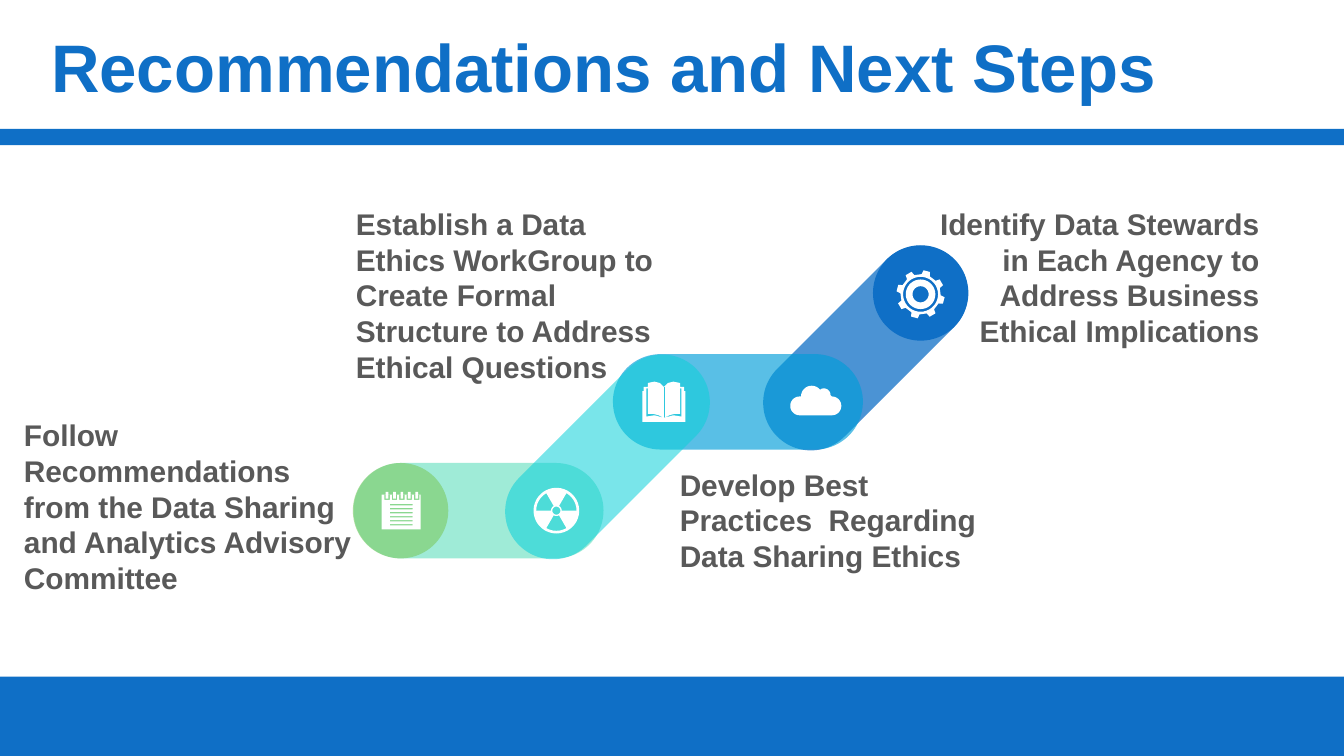
from math import cos, radians, sin

from lxml.etree import SubElement
from pptx import Presentation
from pptx.dml.color import RGBColor
from pptx.enum.shapes import MSO_SHAPE
from pptx.enum.text import MSO_ANCHOR, PP_ALIGN
from pptx.oxml.ns import qn
from pptx.util import Inches, Pt

BLUE, GREY, WHITE = "0F6FC6", "595959", "FFFFFF"


def paint(shape, color, opacity=100):
    """Give a shape a plain fill, without line or shadow."""
    shape.shadow.inherit = False
    shape.line.fill.background()
    shape.fill.solid()
    shape.fill.fore_color.rgb = RGBColor.from_string(color)
    if opacity < 100:
        tint = shape.fill._xPr.find(".//" + qn("a:srgbClr"))
        SubElement(tint, qn("a:alpha"), val=str(opacity * 1000))


def write(shape, text, size=16, color=GREY, align=PP_ALIGN.LEFT,
          anchor=MSO_ANCHOR.TOP, spacing=None):
    frame = shape.text_frame
    frame.word_wrap = True
    frame.vertical_anchor = anchor
    paragraph = frame.paragraphs[0]
    paragraph.alignment = align
    paragraph.line_spacing = spacing
    run = paragraph.add_run()
    run.text = text
    run.font.name = "Arial"
    run.font.size = Pt(size)
    run.font.bold = True
    run.font.color.rgb = RGBColor.from_string(color)


# Widescreen, 16:9
presentation = Presentation()
presentation.slide_width = Inches(10)
presentation.slide_height = Inches(10) * 9 // 16
slide = presentation.slides.add_slide(presentation.slide_layouts[5])
shapes = slide.shapes

# Bands and title
for top, height in [(5.03, 0.59), (0.96, 0.12)]:
    band = shapes.add_shape(MSO_SHAPE.RECTANGLE, 0, Inches(top), Inches(10), Inches(height))
    paint(band, BLUE)
    if top > 5:
        band.top = presentation.slide_height - band.height

title = shapes.title
title.left, title.top = Inches(0.28), Inches(0)
title.width, title.height = Inches(9.72), Inches(0.97)
write(title, "Recommendations and Next Steps", size=36, color=BLUE, anchor=MSO_ANCHOR.MIDDLE)

# Chain of translucent links; each overlap of two round ends makes a step
THICK, LONG = 0.71, 1.86
links = [
    (MSO_SHAPE.ROUNDED_RECTANGLE, 6.44, 2.59, LONG, 45, BLUE, 75),
    (MSO_SHAPE.OVAL, 6.85, 2.18, THICK, 45, BLUE, 100),
    (MSO_SHAPE.ROUNDED_RECTANGLE, 3.56, 3.80, LONG, 90, "10CF9B", 40),
    (MSO_SHAPE.OVAL, 2.98, 3.80, THICK, 90, "7CCA62", 60),
    (MSO_SHAPE.ROUNDED_RECTANGLE, 5.49, 2.99, LONG, 90, "009DD9", 65),
    (MSO_SHAPE.ROUNDED_RECTANGLE, 4.52, 3.40, LONG, 45, "0BD0D9", 55),
]
for kind, x, y, length, angle, color, opacity in links:
    link = shapes.add_shape(kind, Inches(x - THICK / 2), Inches(y - length / 2),
                            Inches(THICK), Inches(length))
    if kind == MSO_SHAPE.ROUNDED_RECTANGLE:
        link.adjustments[0] = 0.5
    link.rotation = angle
    paint(link, color, opacity)

# Recommendations
recommendations = [
    (4.96, 3.42, 2.60, 0.91, PP_ALIGN.LEFT,
     "Develop Best Practices  Regarding Data Sharing Ethics"),
    (6.84, 1.48, 2.63, 1.18, PP_ALIGN.RIGHT,
     "Identify Data Stewards in Each Agency to Address Business Ethical Implications"),
    (2.55, 1.48, 2.56, 1.45, PP_ALIGN.LEFT,
     "Establish a Data Ethics WorkGroup to Create Formal Structure to Address Ethical Questions"),
    (0.08, 3.05, 2.68, 1.65, PP_ALIGN.LEFT,
     "Follow Recommendations from the Data Sharing and Analytics Advisory Committee"),
]
for left, top, width, height, align, text in recommendations:
    box = shapes.add_textbox(Inches(left), Inches(top), Inches(width), Inches(height))
    write(box, text, align=align, spacing=Pt(19.2))

# Icons: each a list of outlines, where an outline inside another cuts a hole
circle = [(cos(radians(a)), sin(radians(a))) for a in range(0, 360, 10)]

# Polar points (angle, radius) of the eight teeth
teeth = [(45 * tooth - 75 + turn, radius) for tooth in range(8)
         for turn, radius in [(-12, 0.15), (-8, 0.18), (8, 0.18), (12, 0.15)]]
gear = [[(6.85 + r * cos(radians(a)), 2.19 + r * sin(radians(a))) for a, r in teeth]]
gear += [[(6.85 + r * x, 2.19 + r * y) for x, y in circle] for r in (0.13, 0.11, 0.06)]

# Half outlines as distances from the spine
cover = [(0, 2.88), (0.03, 2.85), (0.07, 2.84), (0.12, 2.85), (0.12, 2.88), (0.15, 2.88),
         (0.15, 2.91), (0.16, 2.91), (0.16, 3.14), (0, 3.14)]
page_edge = [(0, 3.11), (0.04, 3.09), (0.08, 3.08), (0.12, 3.08), (0.12, 2.89),
             (0.13, 2.89), (0.13, 3.1), (0.07, 3.09)]
book = [[(4.94 + side * x, y) for x, y in half]
        for side in (-1, 1) for half in (cover, page_edge)]
book.append([(4.94, 2.88), (4.95, 2.88), (4.95, 3.11), (4.94, 3.11)])

# Arcs: centre, radius, first and last angle
lobes = [(5.95, 3.02, 0.07, 90, 270), (6.04, 2.95, 0.08, 180, 330),
         (6.13, 2.94, 0.05, 240, 360), (6.19, 3.02, 0.07, 270, 450)]
cloud = [[(x + r * cos(radians(a)), y + r * sin(radians(a)))
          for x, y, r, first, last in lobes for a in range(first, last + 1, 10)]]

# Rectangles: left, top, right, bottom
sheet = [(2.84, 3.68, 3.13, 3.94)]
sheet += [(2.9, 3.75 + 0.03 * row, 3.07, 3.76 + 0.03 * row) for row in range(6)]
for ring in range(5):
    x = 2.88 + 0.055 * ring
    sheet += [(x - 0.02, 3.68, x + 0.02, 3.72), (x - 0.01, 3.66, x + 0.01, 3.71)]
notepad = [[(l, t), (r, t), (r, b), (l, b)] for l, t, r, b in sheet]

sector = [(a, 0.04) for a in range(-30, 31, 10)] + [(a, 0.15) for a in range(30, -31, -10)]
radiation = [[(4.14 + r * x, 3.8 + r * y) for x, y in circle] for r in (0.17, 0.03)]
radiation += [[(4.14 + r * cos(radians(a + turn)), 3.8 + r * sin(radians(a + turn)))
               for a, r in sector] for turn in (90, 210, 330)]

for icon in (gear, book, cloud, notepad, radiation):
    builder = None
    for outline in icon:
        start, *rest = [(Inches(x), Inches(y)) for x, y in outline]
        if builder is None:
            builder = shapes.build_freeform(*start)
        else:
            builder.move_to(*start)
        builder.add_line_segments(rest, close=True)
    paint(builder.convert_to_shape(), WHITE)

presentation.save("out.pptx")
